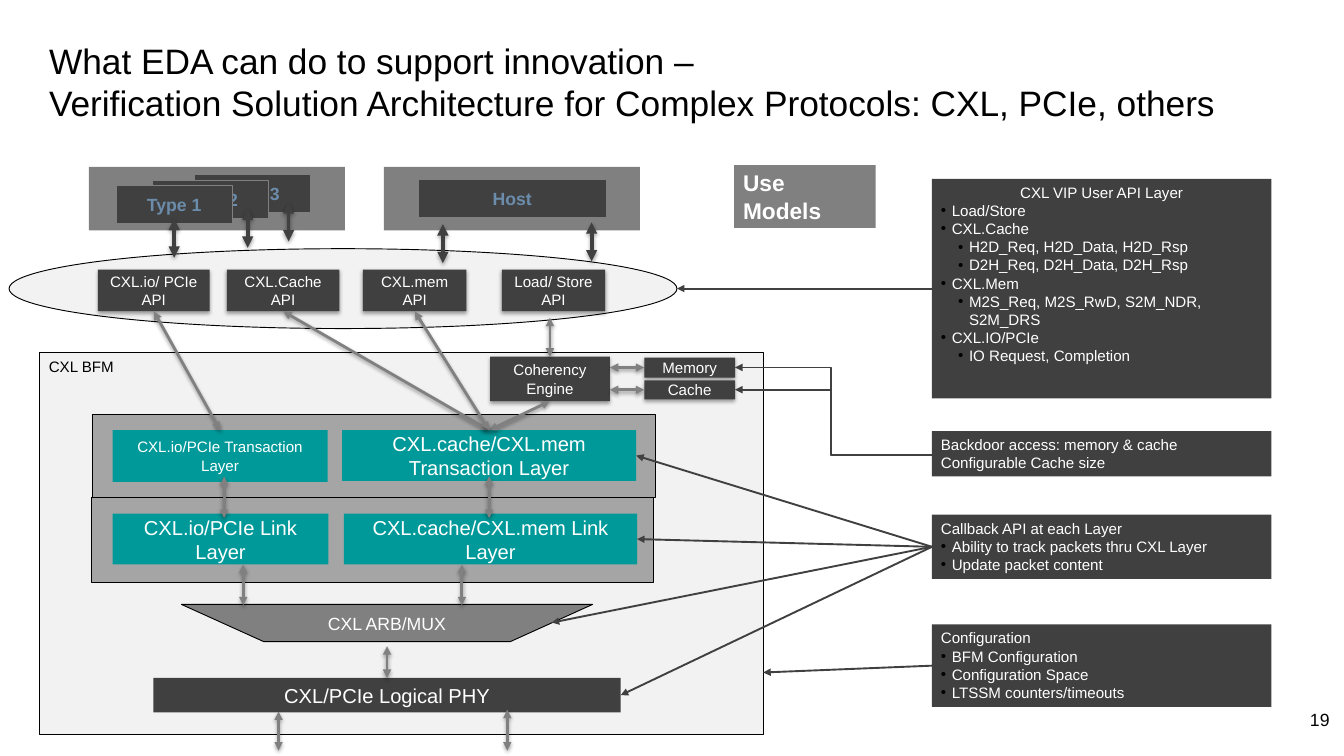
from lxml import etree
from pptx import Presentation
from pptx.dml.color import RGBColor
from pptx.enum.shapes import MSO_CONNECTOR as LINK, MSO_SHAPE as SHAPE
from pptx.enum.text import MSO_ANCHOR as ANCHOR, MSO_AUTO_SIZE as FIT, PP_ALIGN as ALIGN
from pptx.oxml import parse_xml
from pptx.oxml.ns import nsdecls, qn
from pptx.util import Inches, Pt

BLACK = RGBColor(0x00, 0x00, 0x00)
WHITE = RGBColor(0xFF, 0xFF, 0xFF)
DARK = RGBColor(0x40, 0x40, 0x40)
GREY = RGBColor(0x80, 0x80, 0x80)
SILVER = RGBColor(0xA5, 0xA5, 0xA5)
PALE = RGBColor(0xF2, 0xF2, 0xF2)
TEAL = RGBColor(0x00, 0x99, 0x99)
STEEL = RGBColor(0x6B, 0x8C, 0xAB)
FONT = "Arial"
GRID = Inches(0.1)  # one column or row of the layout grid
TOP, LEFT, BOTTOM, RIGHT = range(4)  # connection sites of a rectangle
SHADOW = ('<a:outerShdw %s blurRad="40000" dist="22000" dir="5400000" rotWithShape="0">'
          '<a:srgbClr val="000000"><a:alpha val="36000"/></a:srgbClr></a:outerShdw>' % nsdecls("a"))

prs = Presentation()
prs.slide_width, prs.slide_height = Inches(14.81), Inches(8.33)
slide = prs.slides.add_slide(prs.slide_layouts[5])
shapes = slide.shapes


def box(x, y, w, h, text="", size=12, fill=DARK, line=None, color=WHITE,
        bold=False, kind=SHAPE.RECTANGLE, shadow=False, align=ALIGN.CENTER):
    shape = shapes.add_shape(kind, *(int(v * GRID) for v in (x, y, w, h)))
    shape.shadow.inherit = False
    if shadow:
        shape._element.spPr.find(qn("a:effectLst")).append(parse_xml(SHADOW))
    shape.fill.solid()
    shape.fill.fore_color.rgb = fill
    if line is None:
        shape.line.fill.background()
    else:
        shape.line.color.rgb, shape.line.width = line, Pt(0.75)
    if text:
        label = shape.text_frame.paragraphs[0]
        label.text, label.alignment = text, align
        label.font.name, label.font.size, label.font.bold = FONT, Pt(size), bold
        label.font.color.rgb = color
    return shape


def arrow(start, end, color=DARK, width=1.5, double=False, kind=LINK.STRAIGHT):
    """Each end is a grid point (x, y) or a pair (shape, site)."""
    link = shapes.add_connector(kind, 0, 0, 0, 0)
    if isinstance(start[0], (int, float)):
        link.begin_x, link.begin_y = (int(v * GRID) for v in start)
    else:
        link.begin_connect(*start)
    if isinstance(end[0], (int, float)):
        link.end_x, link.end_y = (int(v * GRID) for v in end)
    else:
        link.end_connect(*end)
    link.line.color.rgb, link.line.width = color, Pt(width)
    ln = link.line._get_or_add_ln()
    for tag in ("a:headEnd", "a:tailEnd") if double else ("a:tailEnd",):
        etree.SubElement(ln, qn(tag), type="triangle")
    effects = etree.SubElement(link._element.spPr, qn("a:effectLst"))
    if double:
        effects.append(parse_xml(SHADOW))
    return link


# Title
title = shapes.title
title.left, title.top, title.width, title.height = (int(v * GRID) for v in (4.4, 3.3, 139.3, 10))
frame = title.text_frame
frame.auto_size, frame.vertical_anchor, frame.word_wrap = FIT.NONE, ANCHOR.TOP, True
frame.margin_left = frame.margin_right = frame.margin_top = frame.margin_bottom = GRID
heading = frame.paragraphs[0]
heading.text = ("What EDA can do to support innovation –\n"
                "Verification Solution Architecture for Complex Protocols: CXL, PCIe, others")
heading.alignment = ALIGN.LEFT
heading.font.name, heading.font.size, heading.font.color.rgb = FONT, Pt(28), BLACK

# Background panels
for x in (9.8, 42.3):
    box(x, 18.4, 28.2, 7, fill=GREY)
box(80.9, 18.2, 15.6, 6.9, "Use Models", 18, GREY, bold=True, align=ALIGN.LEFT)
box(4.4, 38.8, 79.7, 42.1, fill=PALE, line=BLACK)
box(10.1, 54.8, 61.9, 9.4, fill=SILVER, line=BLACK)
box(10.2, 45.7, 62, 9.1, fill=SILVER, line=BLACK)
box(1, 27.4, 73.6, 8.8, fill=PALE, line=BLACK, kind=SHAPE.OVAL)

# Use models: device types and host
for x, y, w, name in ((21.4, 19.2, 12.8, "Type 3"), (16.8, 19.9, 12.8, "Type 2"),
                      (12.8, 20.4, 12.8, "Type 1"), (46.1, 19.8, 20.7, "Host")):
    box(x, y, w, 4.2, name, 14, line=GREY, color=STEEL, bold=True)

# APIs, coherency engine and its stores
io_api, cache_api, mem_api, _, coherency, memory, cache = [
    box(*place, name, shadow=True) for place, name in (
        ((10.8, 29.7, 12.3, 4.6), "CXL.io/ PCIe API"),
        ((25, 29.7, 12.4, 4.6), "CXL.Cache\nAPI"),
        ((40, 29.7, 11.4, 4.6), "CXL.mem API"),
        ((55.3, 29.7, 11.4, 4.6), "Load/ Store API"),
        ((54, 39.3, 13.2, 4.9), "Coherency Engine"),
        ((71, 39.4, 10, 2.2), "Memory"),
        ((71, 41.9, 10, 2.1), "Cache"))]

# Protocol layers
io_transaction = box(12.4, 47.4, 23.7, 5.7, "CXL.io/PCIe Transaction Layer", 12, TEAL)
transaction = box(37.7, 47.4, 32.4, 5.6, "CXL.cache/CXL.mem Transaction Layer", 16, TEAL)
box(12.4, 56.6, 23.8, 5.6, "CXL.io/PCIe Link Layer", 16, TEAL)
link_layer = box(37.9, 56.6, 32.3, 5.6, "CXL.cache/CXL.mem Link Layer", 16, TEAL)
box(20, 66.6, 45.3, 4.1, "CXL ARB/MUX", 14, GREY, BLACK, kind=SHAPE.FLOWCHART_MANUAL_OPERATION)
phy = box(16.9, 74.7, 51.5, 3.8, "CXL/PCIe Logical PHY", 16)

# Notes on the right: (indent level, text)
notes = []
for y, h, lines in (
        (19.7, 24.2, ((0, "CXL VIP User API Layer"), (1, "Load/Store"), (1, "CXL.Cache"),
                      (2, "H2D_Req, H2D_Data, H2D_Rsp"), (2, "D2H_Req, D2H_Data, D2H_Rsp"),
                      (1, "CXL.Mem"), (2, "M2S_Req, M2S_RwD, S2M_NDR, S2M_DRS"),
                      (1, "CXL.IO/PCIe"), (2, "IO Request, Completion"))),
        (47.5, 5, ((0, "Backdoor access: memory & cache"), (0, "Configurable Cache size"))),
        (56.7, 7.1, ((0, "Callback API at each Layer"),
                     (1, "Ability to track packets thru CXL Layer"), (1, "Update packet content"))),
        (68.8, 9.1, ((0, "Configuration"), (1, "BFM Configuration"),
                     (1, "Configuration Space"), (1, "LTSSM counters/timeouts")))):
    note = box(102.7, y, 37.4, h)
    note.text_frame.vertical_anchor = ANCHOR.TOP
    for i, (level, text) in enumerate(lines):
        item = note.text_frame.add_paragraph() if i else note.text_frame.paragraphs[0]
        item.text, item.alignment = text, ALIGN.LEFT
        if level:
            item.level = level - 1
            props = item._p.get_or_add_pPr()
            props.set("marL", str(Inches((0.12, 0.31)[level - 1])))
            props.set("indent", str(-Inches(0.12)))
            tint = etree.SubElement(props, qn("a:buClr"))
            etree.SubElement(tint, qn("a:srgbClr"), val=str(BLACK))
            etree.SubElement(props, qn("a:buFont"), typeface=FONT)
            etree.SubElement(props, qn("a:buChar"), char="•")
        item.font.name, item.font.size, item.font.color.rgb = FONT, Pt(12), WHITE
    notes.append(note)
user_api, backdoor, callback, configuration = notes
user_api.text_frame.paragraphs[0].alignment = ALIGN.CENTER

# Model caption and page number
for place, text, size, align in (((4.4, 38.9, 11.6, 3.8), "CXL BFM", 12, ALIGN.LEFT),
                                 ((138.6, 77.6, 8.9, 6.4), "19", 14, ALIGN.RIGHT)):
    frame = shapes.add_textbox(*(int(v * GRID) for v in place)).text_frame
    frame.word_wrap = True
    caption = frame.paragraphs[0]
    caption.text, caption.alignment = text, align
    caption.font.name, caption.font.size, caption.font.color.rgb = FONT, Pt(size), BLACK

# Two-way arrows inside the model
for start, end in (
        ((cache_api, BOTTOM), (transaction, TOP)), ((coherency, BOTTOM), (transaction, TOP)),
        ((mem_api, BOTTOM), (transaction, TOP)), ((io_api, BOTTOM), (io_transaction, TOP)),
        ((60.6, 35), (coherency, TOP)), ((42.65, 71.2), (phy, TOP)),
        ((67.2, 40.5), (memory, LEFT)), ((67.2, 42.95), (cache, LEFT)),
        ((24.7, 52.5), (24.7, 57.1)), ((53.9, 52.5), (53.9, 57.1)),
        ((26.8, 62.2), (26.8, 66.7)), ((50.9, 62.2), (50.9, 66.7)),
        ((30.7, 78.4), (30.7, 82.7)), ((55.9, 78.2), (55.9, 82.7))):
    arrow(start, end, GREY, 2.25, double=True)

# Two-way arrows between use models and APIs
for x, y in ((19.2, 24.1), (27.3, 23), (31.8, 22.3), (48.8, 24.7), (65.2, 24.5)):
    arrow((x, y), (x, y + 4.3), DARK, 3, double=True)

# Pointers from the notes
arrow((user_api, LEFT), (74.6, 31.8))
arrow((configuration, LEFT), (84.1, 74.1))
for target in ((transaction, RIGHT), (link_layer, RIGHT), (60.8, 68.6), (phy, RIGHT)):
    arrow((callback, LEFT), target)
for y in (40.5, 42.95):
    bent = arrow((102.7, 50.1), (81, y), kind=LINK.ELBOW)
    guides = bent._element.spPr.find(qn("a:prstGeom")).get_or_add_avLst()
    etree.SubElement(guides, qn("a:gd"), name="adj1", fmla="val 51200")

prs.save("out.pptx")
